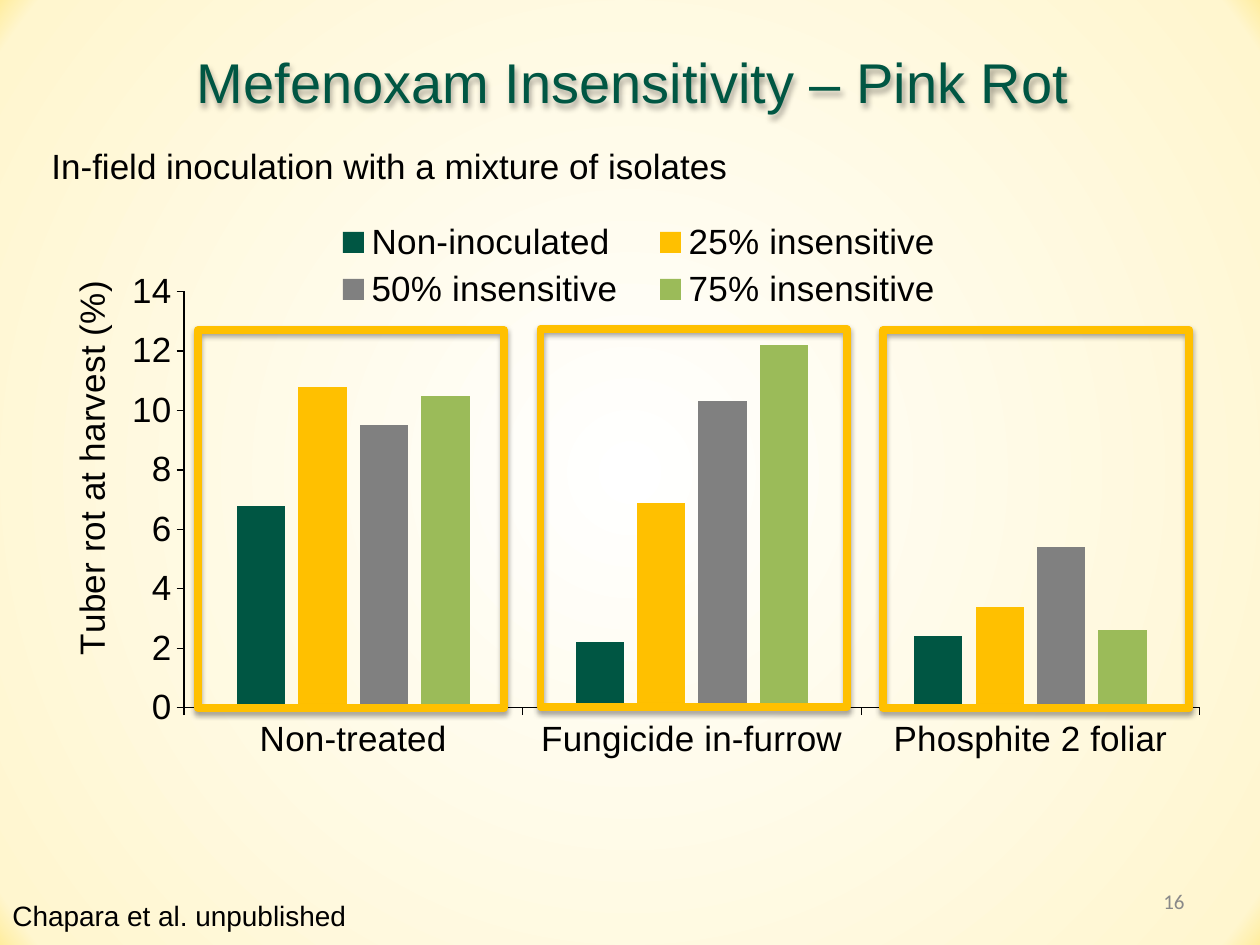
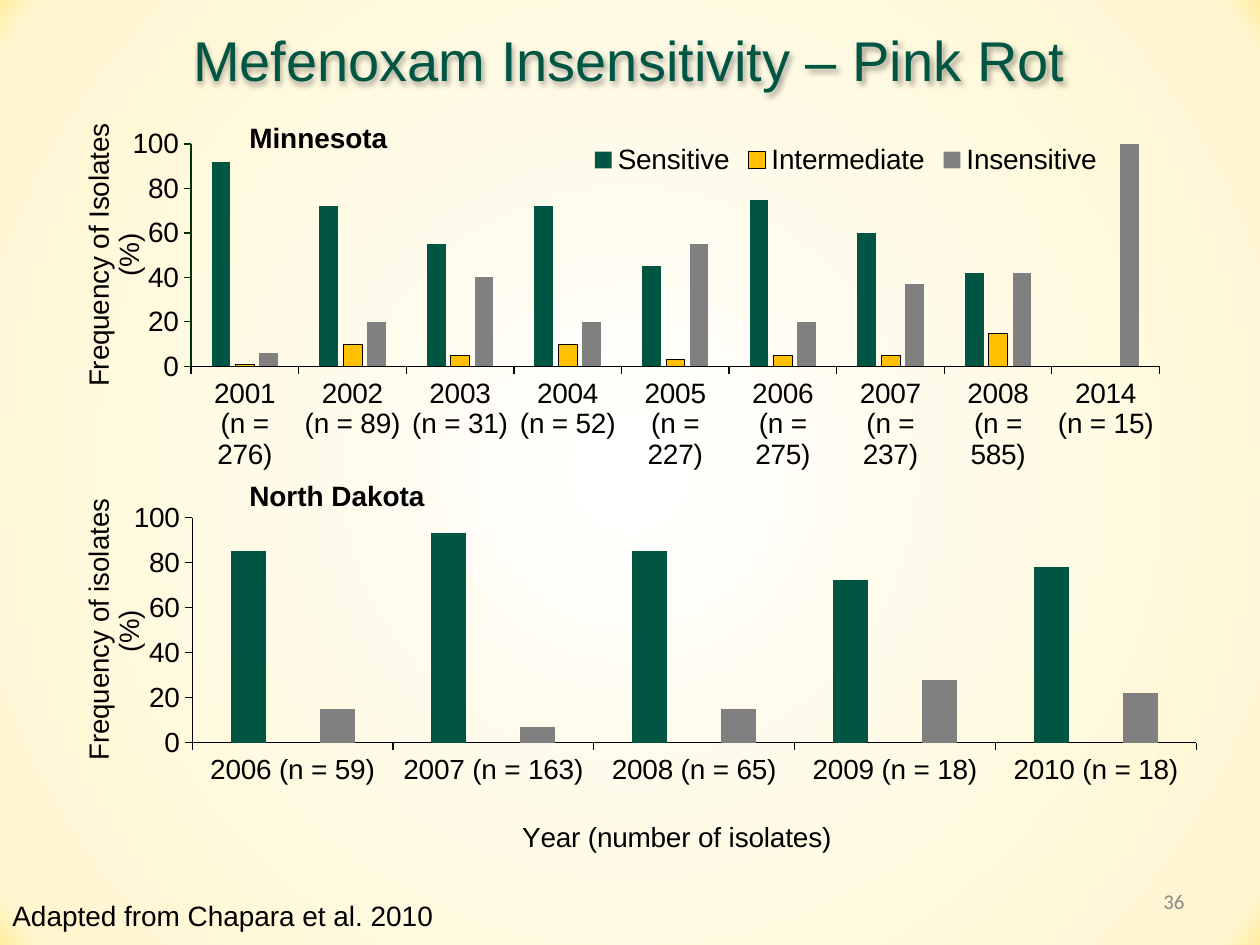
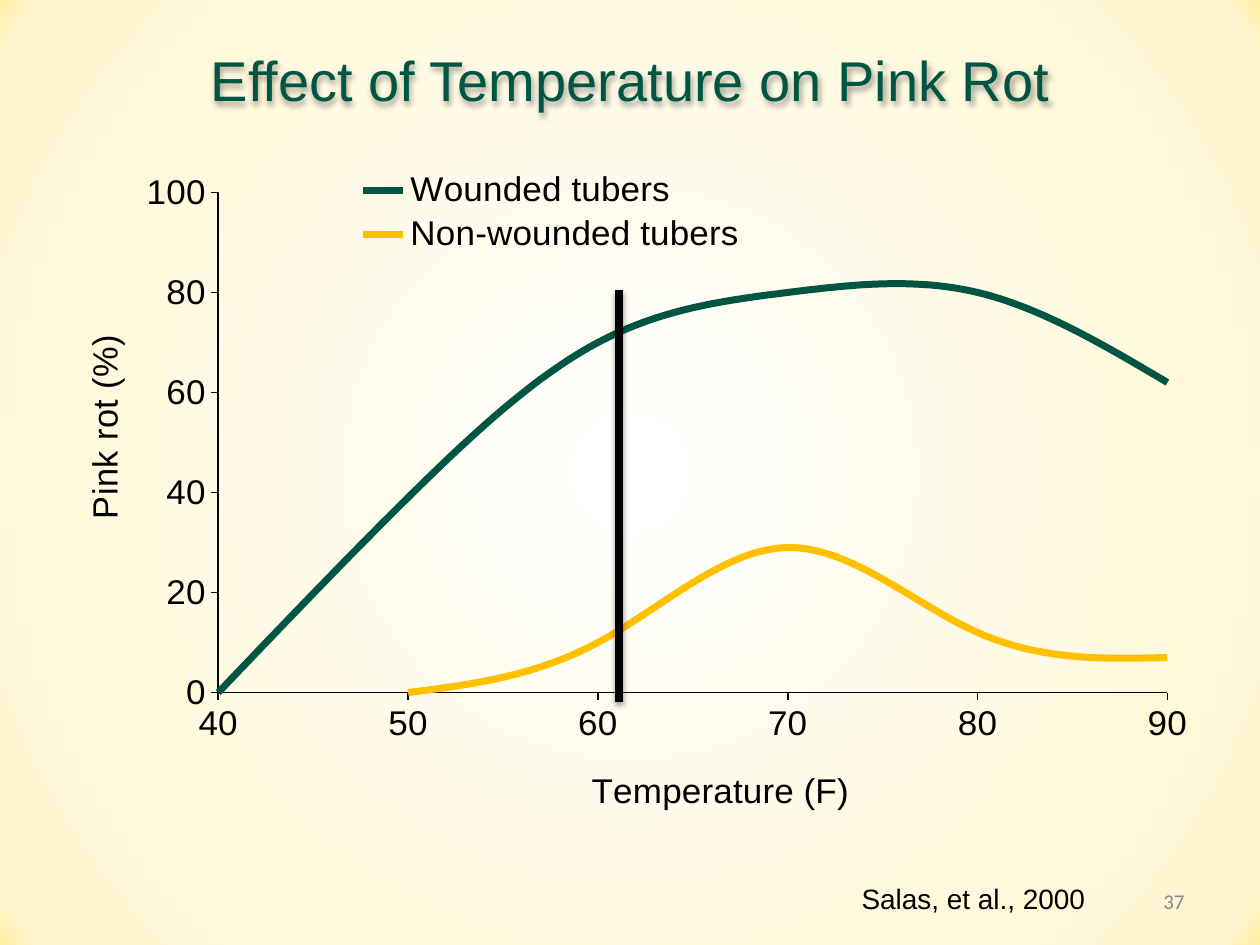
from lxml import etree
from pptx import Presentation
from pptx.chart.data import CategoryChartData
from pptx.dml.color import RGBColor
from pptx.enum.chart import XL_CHART_TYPE, XL_LEGEND_POSITION
from pptx.enum.shapes import MSO_CONNECTOR, MSO_SHAPE
from pptx.enum.text import MSO_ANCHOR, PP_ALIGN
from pptx.oxml import parse_xml
from pptx.oxml.ns import nsdecls, qn
from pptx.util import Inches, Pt

COLUMNS, LINES = XL_CHART_TYPE.COLUMN_CLUSTERED, XL_CHART_TYPE.LINE
LEGEND_RIGHT = XL_LEGEND_POSITION.RIGHT
LEFT, CENTER, RIGHT = PP_ALIGN.LEFT, PP_ALIGN.CENTER, PP_ALIGN.RIGHT
TOP, MIDDLE = MSO_ANCHOR.TOP, MSO_ANCHOR.MIDDLE
RECT, STRAIGHT = MSO_SHAPE.RECTANGLE, MSO_CONNECTOR.STRAIGHT

COLORS = {
    "green": "005643", "gold": "FFC000", "gray": "808080", "lime": "9BBB59",
    "black": "000000", "axis": "003300", "number": "898989",
}
BACKGROUND = [(0, "FFFFFF"), (96, "FFF6CF"), (100, "FFED9F"), (100, "FFC830")]

ROT_CHART = {
    "type": COLUMNS, "at": (0.31, 1.66, 9.43, 4.74), "size": 20,
    "plot": (0.122, 0.138, 0.855, 0.697), "legend": (0.23, 0.01, 0.55, 0.17),
    "value_title": ("Tuber rot at harvest (%)", 0.02, 0.11),
    "max": 14, "step": 2,
    "categories": ["Non-treated", "Fungicide in-furrow", "Phosphite 2 foliar"],
    "series": [
        ("Non-inoculated", "green", [6.8, 2.2, 2.4]),
        ("25% insensitive", "gold", [10.8, 6.9, 3.4]),
        ("50% insensitive", "gray", [9.5, 10.3, 5.4]),
        ("75% insensitive", "lime", [10.5, 12.2, 2.6]),
    ],
}
MINNESOTA_COUNTS = [
    (2001, 276), (2002, 89), (2003, 31), (2004, 52), (2005, 227),
    (2006, 275), (2007, 237), (2008, 585), (2014, 15),
]
MINNESOTA_CHART = {
    "type": COLUMNS, "at": (0.51, 0.91, 8.99, 3), "size": 16,
    "plot": (0.112, 0.078, 0.855, 0.588), "legend": (0.46, 0.07, 0.46, 0.1),
    "value_title": ("Frequency of Isolates (%)", 0.01, 0.01),
    "max": 100, "step": 20, "value_line": "axis", "outlined": {"Intermediate": 0.25},
    "categories": [f"{year}\n(n = {n})" for year, n in MINNESOTA_COUNTS],
    "series": [
        ("Sensitive", "green", [92, 72, 55, 72, 45, 75, 60, 42, 0]),
        ("Intermediate", "gold", [1, 10, 5, 10, 3, 5, 5, 15, 0]),
        ("Insensitive", "gray", [6, 20, 40, 20, 55, 20, 37, 42, 100]),
    ],
}
DAKOTA_COUNTS = [(2006, 59), (2007, 163), (2008, 65), (2009, 18), (2010, 18)]
DAKOTA_CHART = {
    "type": COLUMNS, "at": (0.51, 3.83, 8.99, 3), "size": 16,
    "plot": (0.113, 0.094, 0.887, 0.604),
    "value_title": ("Frequency of isolates (%)", 0.01, 0.04),
    "category_title": ("Year (number of isolates)", 0.4, 0.89),
    "max": 100, "step": 20, "outlined": {"Series 2": 1},
    "categories": [f"{year} (n = {n})" for year, n in DAKOTA_COUNTS],
    "series": [
        ("Series 1", "green", [85, 93, 85, 72, 78]),
        ("Series 2", "gold", [0, 0, 0, 0, 0]),
        ("Series 3", "gray", [15, 7, 15, 28, 22]),
    ],
}
TEMPERATURE_CHART = {
    "type": LINES, "at": (0.51, 1.16, 8.99, 5.36), "size": 20,
    "plot": (0.136, 0.07, 0.838, 0.755), "legend": (0.25, 0.03, 0.36, 0.14),
    "value_title": ("Pink rot (%)", 0.01, 0.28),
    "category_title": ("Temperature (F)", 0.46, 0.93),
    "max": 100, "step": 20, "axis_width": 1,
    "categories": ["40", "50", "60", "70", "80", "90"],
    "series": [
        ("Wounded tubers", "green", [0, 39, 70, 80, 80, 62]),
        ("Non-wounded tubers", "gold", [None, 0, 10, 29, 12, 7]),
    ],
}
SLIDES = [
    {
        "title": ("Mefenoxam Insensitivity – Pink Rot", 0.53, 0.33), "number": 16,
        "charts": [ROT_CHART],
        "labels": [("In-field inoculation with a mixture of isolates",
                    (0.31, 1.1, 5.61, 0.44), 20, False),
                   ("Chapara et al. unpublished", (0, 7.08, 2.88, 0.37), 16, False)],
        "frames": [(1.57, 2.62), (4.29, 2.61), (7.01, 2.62)],
    },
    {
        "title": ("Mefenoxam Insensitivity – Pink Rot", 0.5, 0.15), "number": 36,
        "charts": [MINNESOTA_CHART, DAKOTA_CHART],
        "labels": [("Adapted from Chapara et al. 2010", (0, 7.08, 3.58, 0.37), 16, False),
                   ("Minnesota", (1.88, 0.91, 1.31, 0.37), 16, True),
                   ("North Dakota", (1.88, 3.75, 1.61, 0.37), 16, True)],
    },
    {
        "title": ("Effect of Temperature on Pink Rot", 0.51, 0.31), "number": 37,
        "charts": [TEMPERATURE_CHART],
        "labels": [("Salas, et al., 2000", (6.74, 6.95, 2, 0.37), 16, False)],
        "threshold": (4.91, 5.57, 4.91, 2.3),
    },
]


def inches(values):
    return [Inches(v) for v in values]


def color(name):
    return RGBColor.from_string(COLORS[name])


def set_font(font, size, name="Arial", ink="black", bold=False):
    font.name, font.size, font.bold = name, Pt(size), bold
    font.color.rgb = color(ink)


def set_line(line, ink, width):
    line.color.rgb = color(ink)
    line.width = Pt(width)


def set_background(master):
    """Give every slide the pale radial gradient."""
    master.background.fill.gradient()
    grad = master.element.find(".//" + qn("a:gradFill"))
    for child in list(grad):
        grad.remove(child)
    stops = etree.SubElement(grad, qn("a:gsLst"))
    for position, rgb in BACKGROUND:
        stop = etree.SubElement(stops, qn("a:gs"), pos=str(position * 1000))
        etree.SubElement(stop, qn("a:srgbClr"), val=rgb)
    shade = etree.SubElement(grad, qn("a:path"), path="circle")
    etree.SubElement(shade, qn("a:fillToRect"), l="50000", t="50000", r="50000", b="50000")


def add_shadow(sp, alpha=35, dist=1.8):
    sp._element.spPr.append(parse_xml(
        f'<a:effectLst {nsdecls("a")}><a:outerShdw blurRad="{Pt(3.1)}" dist="{Pt(dist)}" '
        f'dir="5400000" rotWithShape="0"><a:srgbClr val="{COLORS["black"]}">'
        f'<a:alpha val="{alpha * 1000}"/></a:srgbClr></a:outerShdw></a:effectLst>'))


def add_text(s, text, at, size, align=LEFT, anchor=TOP, wrap=True, **font):
    sp = s.shapes.add_textbox(*inches(at))
    tf = sp.text_frame
    tf.word_wrap, tf.vertical_anchor = wrap, anchor
    p = tf.paragraphs[0]
    p.text, p.alignment = text, align
    set_font(p.font, size, **font)
    return sp


def place(element, box, inner=False):
    """Fix a chart part at fractions (x, y[, w, h]) of the chart area."""
    for old in element.findall(qn("c:layout")):
        element.remove(old)
    layout = etree.Element(qn("c:layout"))
    manual = etree.SubElement(layout, qn("c:manualLayout"))
    if inner:
        etree.SubElement(manual, qn("c:layoutTarget"), val="inner")
    for side in "xy":
        etree.SubElement(manual, qn(f"c:{side}Mode"), val="edge")
    for side, value in zip("xywh", box):
        etree.SubElement(manual, qn(f"c:{side}"), val=str(value))
    overlay = element.find(qn("c:overlay"))
    if overlay is None:
        element.insert(0, layout)
    else:
        overlay.addprevious(layout)


def set_axis(axis, title, size, ink, width, rotation):
    axis.has_major_gridlines = False
    set_line(axis.format.line, ink, width)
    set_font(axis.tick_labels.font, size)
    if not title:
        axis.has_title = False
        return
    text, x, y = title
    tf = axis.axis_title.text_frame
    tf.text = text
    set_font(tf.paragraphs[0].font, size)
    element = axis._element.find(qn("c:title"))
    element.find(".//" + qn("a:bodyPr")).set("rot", str(rotation * 60000))
    place(element, (x, y))


def add_chart(s, spec):
    data = CategoryChartData(number_format="General")
    data.categories = spec["categories"]
    for name, _, values in spec["series"]:
        data.add_series(name, values)
    chart = s.shapes.add_chart(spec["type"], *inches(spec["at"]), data).chart
    size, width = spec["size"], spec.get("axis_width", 0.75)
    set_font(chart.font, size)
    chart.has_title = False
    place(chart._chartSpace.find(".//" + qn("c:plotArea")), spec["plot"], inner=True)

    set_axis(chart.category_axis, spec.get("category_title"), size, "black", width, 0)
    axis = chart.value_axis
    set_axis(axis, spec["value_title"], size, spec.get("value_line", "black"), width, -90)
    axis.minimum_scale, axis.maximum_scale = 0, spec["max"]
    axis.major_unit = spec["step"]
    axis.tick_labels.number_format = "0"
    axis.tick_labels.number_format_is_linked = False

    chart.has_legend = "legend" in spec
    if chart.has_legend:
        legend = chart.legend
        legend.position, legend.include_in_layout = LEGEND_RIGHT, False
        set_font(legend.font, size)
        place(legend._element, spec["legend"])

    plot = chart.plots[0]
    plot.vary_by_categories = False
    if spec["type"] == LINES:
        start_on_axis(axis)
    else:
        plot.gap_width, plot.overlap = 219, -27
    for series, (name, ink, _) in zip(plot.series, spec["series"]):
        if spec["type"] == LINES:
            series.smooth = True
            set_line(series.format.line, ink, 4)
            continue
        series.invert_if_negative = False
        series.format.fill.solid()
        series.format.fill.fore_color.rgb = color(ink)
        if name in spec.get("outlined", {}):
            set_line(series.format.line, "black", spec["outlined"][name])


def start_on_axis(axis):
    """Let the first category sit on the value axis."""
    cross = axis._element.find(qn("c:crossBetween"))
    if cross is None:
        cross = etree.Element(qn("c:crossBetween"))
        axis._element.find(qn("c:crosses")).addnext(cross)
    cross.set("val", "midCat")


def add_frame(s, left, top):
    sp = s.shapes.add_shape(RECT, *inches((left, top, 2.43, 3)))
    sp.fill.background()
    set_line(sp.line, "gold", 4.5)
    add_shadow(sp)


def add_threshold(s, ends):
    line = s.shapes.add_connector(STRAIGHT, *inches(ends))
    set_line(line.line, "black", 4.5)
    add_shadow(line, alpha=38, dist=1.6)


def build_slide(prs, content):
    s = prs.slides.add_slide(prs.slide_layouts[6])
    add_text(s, str(content["number"]), (7.17, 6.95, 2.33, 0.4), 12, RIGHT, MIDDLE,
             name="Calibri", ink="number")
    for spec in content["charts"]:
        add_chart(s, spec)
    title, left, top = content["title"]
    add_shadow(add_text(s, title, (left, top, 8.99, 0.64), 32, CENTER, ink="green"))
    for text, at, size, bold in content["labels"]:
        add_text(s, text, at, size, wrap=False, bold=bold)
    for left, top in content.get("frames", []):
        add_frame(s, left, top)
    if "threshold" in content:
        add_threshold(s, content["threshold"])


def main():
    prs = Presentation()
    prs.slide_width, prs.slide_height = Inches(10), Inches(7.5)
    set_background(prs.slide_master)
    for content in SLIDES:
        build_slide(prs, content)
    prs.save("out.pptx")


if __name__ == "__main__":
    main()
